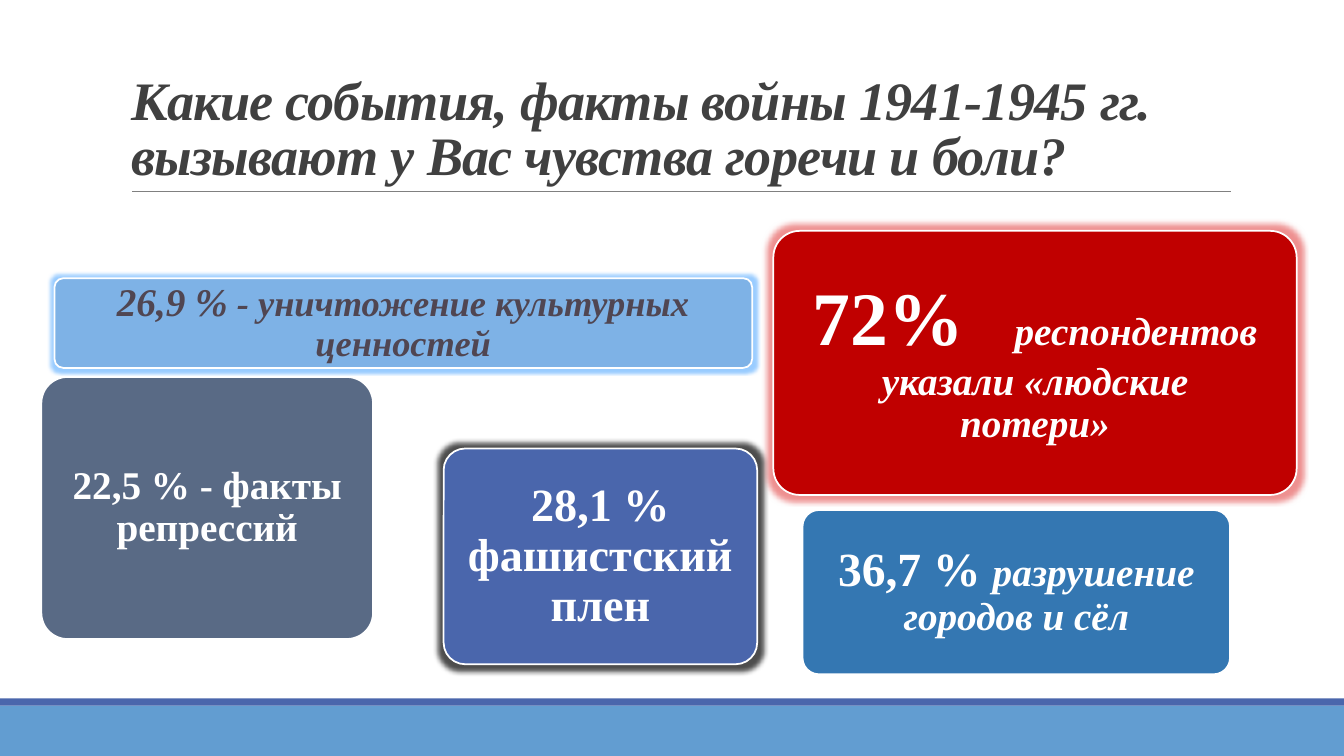
from dataclasses import dataclass

from lxml import etree
from pptx import Presentation
from pptx import util as u
from pptx.dml.color import RGBColor
from pptx.enum import shapes, text
from pptx.oxml.ns import qn


@dataclass(frozen=True)
class Theme:
    font: str = "Times New Roman"
    ink: str = "404040"
    plum: str = "504652"
    white: str = "FFFFFF"
    rule: str = "808080"
    sky: str = "629DD1"
    indigo: str = "4A66AC"
    pale: str = "7EB2E6"
    slate: str = "596A85"
    blue: str = "3477B2"
    red: str = "C00000"
    title: float = 38.7
    figure: int = 54
    large: int = 34
    medium: int = 33
    body: int = 28
    small: int = 26


class SurveySlide:
    def __init__(self, page, theme):
        self.page = page
        self.theme = theme

    def style(self, font, size, color, italic=False):
        font.name = self.theme.font
        font.size = u.Pt(size)
        font.bold = True
        font.italic = italic
        font.color.rgb = RGBColor.from_string(color)

    def title(self, wording, place):
        box = self.page.shapes.title
        box.left, box.top, box.width, box.height = map(u.Inches, place)
        frame = box.text_frame
        frame.word_wrap = True
        frame.auto_size = text.MSO_AUTO_SIZE.NONE
        frame.vertical_anchor = text.MSO_ANCHOR.BOTTOM
        para = frame.paragraphs[0]
        para.alignment = text.PP_ALIGN.LEFT
        para.line_spacing = 0.85
        span = para.add_run()
        span.text = wording
        self.style(para.font, self.theme.title, self.theme.ink, italic=True)
        self.track(span, -0.5)

    def track(self, span, points):
        span.font._element.set("spc", str(int(points * 100)))

    def shape(self, kind, place, fill, outline=None):
        box = self.page.shapes.add_shape(kind, *map(u.Inches, place))
        box.shadow.inherit = False
        box.fill.solid()
        box.fill.fore_color.rgb = RGBColor.from_string(fill)
        if outline:
            box.line.color.rgb = RGBColor.from_string(outline)
            box.line.width = u.Pt(1.25)
        else:
            box.line.fill.background()
        return box

    def bar(self, place, fill):
        self.shape(shapes.MSO_SHAPE.RECTANGLE, place, fill)

    def rule(self, left, right, top):
        line = self.page.shapes.add_connector(
            shapes.MSO_CONNECTOR.STRAIGHT, *map(u.Inches, (left, top, right, top)))
        line.line.color.rgb = RGBColor.from_string(self.theme.rule)
        line.line.width = u.Pt(0.5)
        etree.SubElement(line._element.spPr, qn("a:effectLst"))

    def glow(self, box, color, points, opacity):
        effects = box._element.spPr.find(qn("a:effectLst"))
        glow = etree.SubElement(effects, qn("a:glow"), rad=str(u.Pt(points)))
        tint = etree.SubElement(glow, qn("a:srgbClr"), val=color)
        etree.SubElement(tint, qn("a:alpha"), val=str(opacity * 1000))

    def card(self, place, fill, inset, spans, color=None, glow=None):
        """Each span is (wording, size, italic, letter spacing)."""
        box = self.shape(shapes.MSO_SHAPE.ROUNDED_RECTANGLE, place, fill, self.theme.white)
        box.adjustments[0] = 0.1
        if glow:
            self.glow(box, *glow)
        frame = box.text_frame
        frame.word_wrap = True
        frame.vertical_anchor = text.MSO_ANCHOR.MIDDLE
        frame.margin_left = frame.margin_right = u.Inches(inset)
        frame.margin_top = frame.margin_bottom = u.Inches(inset)
        para = frame.paragraphs[0]
        para.alignment = text.PP_ALIGN.CENTER
        para.line_spacing = 0.9
        for wording, size, italic, spacing in spans:
            span = para.add_run()
            span.text = wording
            self.style(span.font, size, color or self.theme.white, italic)
            if spacing:
                self.track(span, spacing)


def main():
    deck = Presentation()
    deck.slide_width, deck.slide_height = u.Inches(13.33), u.Inches(7.5)
    theme = Theme()
    slide = SurveySlide(deck.slides.add_slide(deck.slide_layouts[5]), theme)

    # Footer bands and title
    slide.bar((0, 7, 13.33, 0.5), theme.sky)
    slide.bar((0, 6.93, 13.33, 0.07), theme.indigo)
    slide.rule(1.31, 12.21, 1.9)
    slide.title("Какие события, факты войны 1941-1945 гг. вызывают у Вас чувства горечи и боли?",
                (1.2, 0.31, 11, 1.59))

    # Survey answers
    slide.card((0.54, 2.76, 6.92, 0.89), theme.pale, 0.12,
               [("26,9 %", theme.body, True, 0),
                (" - уничтожение культурных ценностей", theme.small, True, 0)],
               color=theme.plum, glow=("3399FF", 5, 50))
    slide.card((0.41, 3.74, 3.29, 2.6), theme.slate, 0.12,
               [("22,5 % - факты репрессий", theme.body, False, 0)])
    slide.card((7.96, 5.06, 4.24, 1.63), theme.blue, 0.14,
               [("36,7 % ", theme.large, False, 0),
                ("разрушение городов и сёл", theme.body, True, 0)])
    slide.card((4.4, 4.45, 3.11, 2.14), theme.indigo, 0.14,
               [("28,1 % фашистский плен", theme.medium, False, 0)],
               glow=("000000", 8, 70))
    slide.card((7.67, 2.29, 5.19, 2.62), theme.red, 0.23,
               [("72%", theme.figure, False, 0),
                (" ", theme.figure, False, 22.5),
                ("респондентов указали «людские потери»", theme.body, True, 0)],
               glow=("DD2222", 8, 50))

    deck.save("out.pptx")


if __name__ == "__main__":
    main()
